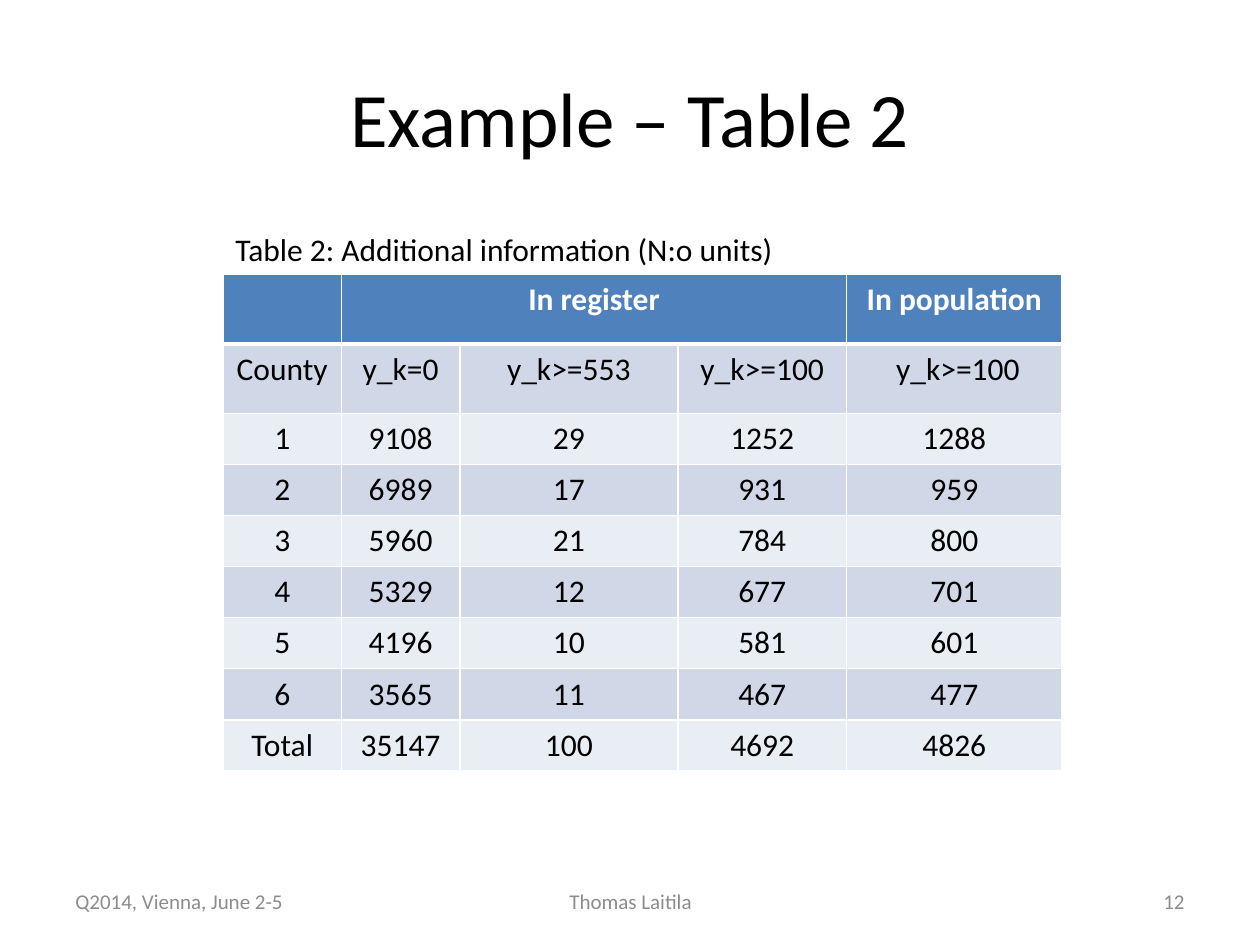
"""Build a slide with a table of unit counts by county."""
from dataclasses import dataclass

import lxml.etree
import pptx
import pptx.dml.color
import pptx.enum.text
import pptx.oxml.ns
import pptx.util

WIDTH, HEIGHT = 10, 7.5
FONT = "Calibri"
BLACK, WHITE, GREY = "000000", "FFFFFF", "8C8C8C"
HEADER_FILL, BAND_FILLS = "4F81BD", ("D0D8E8", "E9EDF4")
ALIGN = pptx.enum.text.PP_ALIGN
ANCHOR = pptx.enum.text.MSO_ANCHOR

TABLE_LEFT, TABLE_TOP, TABLE_HEIGHT = 1.77, 2.18, 3.94
COLUMNS = (0.94, 0.94, 1.73, 1.34, 1.71)
HEADING_ROWS, HEADING_HEIGHT = 2, 0.55
ROWS = (
    ("", "In register", "", "", "In population"),
    ("County", "y_k=0", "y_k>=553", "y_k>=100", " y_k>=100"),
    ("1", "9108", "29", "1252", "1288"),
    ("2", "6989", "17", "931", "959"),
    ("3", "5960", "21", "784", "800"),
    ("4", "5329", "12", "677", "701"),
    ("5", "4196", "10", "581", "601"),
    ("6", "3565", "11", "467", "477"),
    ("Total", "35147", "100", "4692", "4826"),
)


@dataclass(frozen=True)
class Footer:
    text: str
    left: float
    width: float
    align: ALIGN


FOOTERS = (
    Footer("Q2014, Vienna, June 2-5", 0.05, 0.233, ALIGN.LEFT),
    Footer("Thomas Laitila", 0.342, 0.317, ALIGN.CENTER),
    Footer("12", 0.717, 0.233, ALIGN.RIGHT),
)


def color(value: str) -> pptx.dml.color.RGBColor:
    return pptx.dml.color.RGBColor.from_string(value)


def write(frame, text: str, *, size=18, fill=BLACK, bold=False, align=ALIGN.LEFT) -> None:
    para = frame.paragraphs[0]
    para.alignment = align
    span = para.add_run()
    span.text = text
    span.font.name = FONT
    span.font.size = pptx.util.Pt(size)
    span.font.bold = bold
    span.font.color.rgb = color(fill)


def place(shape, left: float, top: float, width: float, height: float) -> None:
    shape.left, shape.top, shape.width, shape.height = map(
        pptx.util.Inches, (left, top, width, height))


def add_text(page, text: str, left: float, top: float, width: float, height: float,
             *, wrap=True, anchor=ANCHOR.TOP, **style) -> None:
    box = page.shapes.add_textbox(0, 0, 0, 0)
    frame = box.text_frame
    frame.word_wrap = wrap
    frame.vertical_anchor = anchor
    if not wrap:
        frame.auto_size = pptx.enum.text.MSO_AUTO_SIZE.SHAPE_TO_FIT_TEXT
    write(frame, text, **style)
    place(box, left, top, width, height)


def set_borders(cell, top: float, bottom: float) -> None:
    properties = cell._tc.get_or_add_tcPr()
    name = pptx.oxml.ns.qn
    sides = (("a:lnL", 1), ("a:lnR", 1), ("a:lnT", top), ("a:lnB", bottom))
    for index, (side, points) in enumerate(sides):
        line = lxml.etree.Element(name(side), w=str(pptx.util.Pt(points)))
        fill = lxml.etree.SubElement(line, name("a:solidFill"))
        lxml.etree.SubElement(fill, name("a:srgbClr"), val=WHITE)
        properties.insert(index, line)


def add_counts(page) -> None:
    frame = page.shapes.add_table(len(ROWS), len(COLUMNS), 0, 0, 0, 0)
    place(frame, TABLE_LEFT, TABLE_TOP, sum(COLUMNS), TABLE_HEIGHT)
    table = frame.table
    for column, width in zip(table.columns, COLUMNS):
        column.width = pptx.util.Inches(width)
    body_height = (TABLE_HEIGHT - HEADING_ROWS * HEADING_HEIGHT) / (len(ROWS) - HEADING_ROWS)
    for r, texts in enumerate(ROWS):
        header = r == 0
        table.rows[r].height = pptx.util.Inches(
            HEADING_HEIGHT if r < HEADING_ROWS else body_height)
        for c, text in enumerate(texts):
            cell = table.cell(r, c)
            cell.margin_left = cell.margin_right = pptx.util.Inches(0.05)
            cell.fill.solid()
            cell.fill.fore_color.rgb = color(HEADER_FILL if header else BAND_FILLS[(r - 1) % 2])
            set_borders(cell, top=3 if r == 1 else 1, bottom=3 if header else 1)
            if text:
                write(cell.text_frame, text, fill=WHITE if header else BLACK,
                      bold=header, align=ALIGN.CENTER)
    table.cell(0, 1).merge(table.cell(0, 3))


def main() -> None:
    deck = pptx.Presentation()
    deck.slide_width = pptx.util.Inches(WIDTH)
    deck.slide_height = pptx.util.Inches(HEIGHT)
    page = deck.slides.add_slide(deck.slide_layouts[5])
    title = page.shapes.title
    place(title, 0.05 * WIDTH, 0.04 * HEIGHT, 0.9 * WIDTH, HEIGHT / 6)
    title.text_frame.vertical_anchor = ANCHOR.MIDDLE
    write(title.text_frame, "Example – Table 2", size=44, align=ALIGN.CENTER)
    add_counts(page)
    add_text(page, "Table 2: Additional information (N:o units)",
             TABLE_LEFT, TABLE_TOP - 0.4, 4.52, 0.4, wrap=False)
    for footer in FOOTERS:
        add_text(page, footer.text, footer.left * WIDTH, 6.95, footer.width * WIDTH, 0.4,
                 anchor=ANCHOR.MIDDLE, size=12, fill=GREY, align=footer.align)
    deck.save("out.pptx")


if __name__ == "__main__":
    main()
